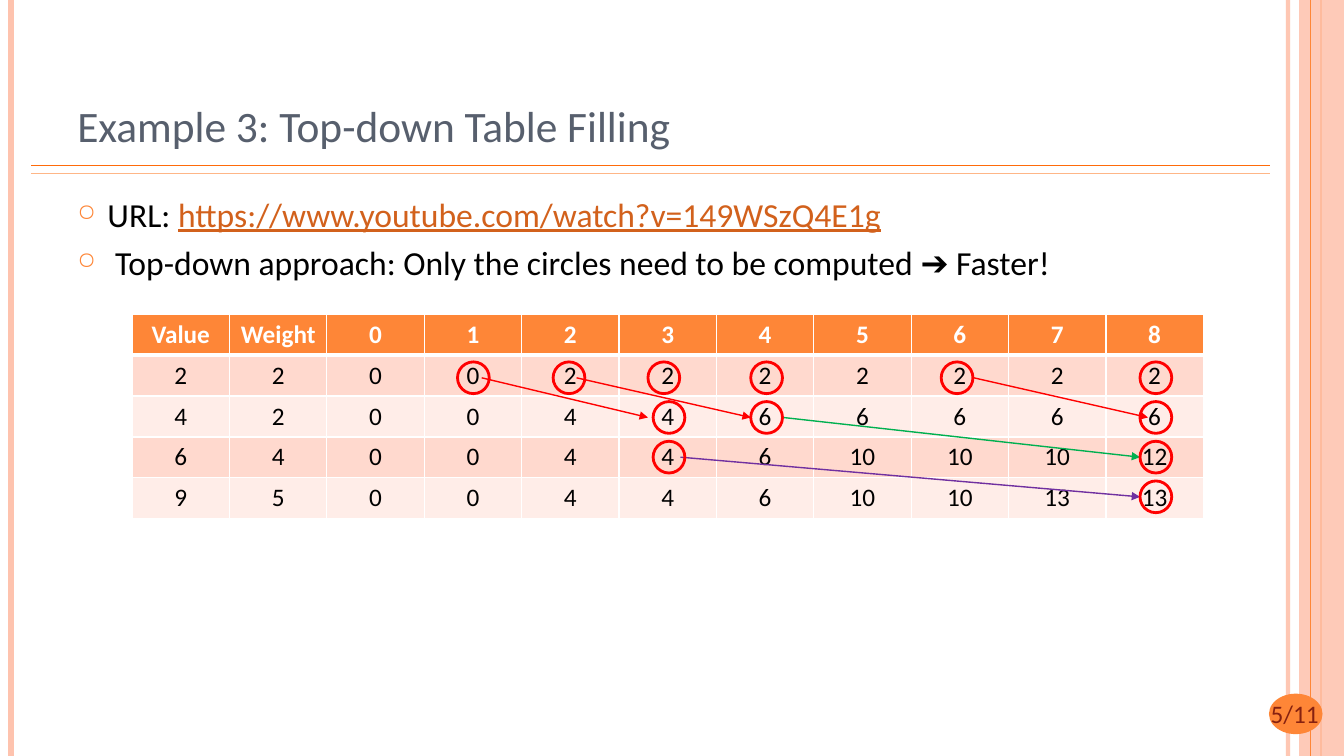
import pptx
import pptx.util
import pptx.dml.color
import pptx.enum.shapes
import pptx.enum.text
import pptx.oxml
import pptx.oxml.ns

Cm = pptx.util.Cm
Pt = pptx.util.Pt
RGBColor = pptx.dml.color.RGBColor
Kind = pptx.enum.shapes.MSO_SHAPE
Align = pptx.enum.text.PP_ALIGN
Anchor = pptx.enum.text.MSO_ANCHOR

WHITE = RGBColor(0xFF, 0xFF, 0xFF)
BLACK = RGBColor(0x00, 0x00, 0x00)
ORANGE = RGBColor(0xFE, 0x86, 0x37)
DEEP = RGBColor(0xFF, 0x6B, 0x0A)
LIGHT = RGBColor(0xFE, 0xB6, 0x87)
PEACH = RGBColor(0xFE, 0xC3, 0xAE)
SLATE = RGBColor(0x57, 0x5F, 0x6D)
RUST = RGBColor(0xD2, 0x61, 0x1C)
MAROON = RGBColor(0x86, 0x21, 0x10)
BANDS = (RGBColor(0xFF, 0xD9, 0xCE), RGBColor(0xFF, 0xED, 0xE8))
RED = RGBColor(0xFF, 0x00, 0x00)
GREEN = RGBColor(0x00, 0xB0, 0x50)
PURPLE = RGBColor(0x70, 0x30, 0xA0)

WIDE, HIGH = 33.87, 19.05
ROWS = (
    "Value Weight 0 1 2 3 4 5 6 7 8",
    "2 2 0 0 2 2 2 2 2 2 2",
    "4 2 0 0 4 4 6 6 6 6 6",
    "6 4 0 0 4 4 6 10 10 10 12",
    "9 5 0 0 4 4 6 10 10 13 13",
)
RING = 0.8
RING_TOP = 9.12
STEP = 1.0
# Left edge of the rings, and the data rows they mark
RINGS = (
    (11.53, (0,)), (13.94, (0,)), (16.33, (0,)), (16.46, (1, 2)),
    (18.92, (0, 1)), (23.72, (0,)), (28.73, (0, 1, 2, 3)),
)
# Start x, end x, data row at the start, colour
ARROWS = (
    (12.14, 16.33, 0, RED), (14.53, 18.92, 0, RED), (24.54, 28.93, 0, RED),
    (19.74, 28.73, 1, GREEN), (17.15, 28.73, 2, PURPLE),
)


def make(tag, xml=""):
    """Build one DrawingML element with the given content."""
    name = tag.split()[0]
    space = pptx.oxml.ns.nsdecls("a")
    return pptx.oxml.parse_xml(f"<a:{tag} {space}>{xml}</a:{name}>")


def fade(fill, share):
    """Set the opacity, in percent, of a solid fill element's colour."""
    color = fill.find(".//" + pptx.oxml.ns.qn("a:srgbClr"))
    color.append(make(f'alpha val="{share * 1000}"'))


def style(run, size, color, bold=False):
    run.font.name = "Calibri"
    run.font.size = Pt(size)
    run.font.color.rgb = color
    run.font.bold = bold


def add_line(slide, x1, y1, x2, y2, color, width):
    line = slide.shapes.add_connector(
        pptx.enum.shapes.MSO_CONNECTOR.STRAIGHT, Cm(x1), Cm(y1), Cm(x2), Cm(y2))
    line.line.color.rgb = color
    line.line.width = Pt(width)
    line._element.spPr.append(make("effectLst"))
    return line


def add_arrow(slide, x1, y1, x2, y2, color):
    arrow = add_line(slide, x1, y1, x2, y2, color, 1)
    arrow.line._get_or_add_ln().append(make('tailEnd type="triangle"'))


def add_solid(slide, kind, x, y, w, h, color):
    shape = slide.shapes.add_shape(kind, Cm(x), Cm(y), Cm(w), Cm(h))
    shape.shadow.inherit = False
    shape.fill.solid()
    shape.fill.fore_color.rgb = color
    shape.line.fill.background()
    return shape


def add_ring(slide, x, y):
    ring = slide.shapes.add_shape(Kind.OVAL, Cm(x), Cm(y), Cm(RING), Cm(RING))
    ring.shadow.inherit = False
    ring.fill.background()
    ring.line.color.rgb = RED
    ring.line.width = Pt(2)


def add_box(slide, x, y, w, h, anchor=Anchor.TOP):
    box = slide.shapes.add_textbox(Cm(x), Cm(y), Cm(w), Cm(h))
    frame = box.text_frame
    frame.word_wrap = True
    frame.vertical_anchor = anchor
    return frame


def add_label(frame, text, size, color, align):
    frame.text = text
    para = frame.paragraphs[0]
    para.alignment = align
    style(para.runs[0], size, color)


def add_bullet(para):
    props = para._p.get_or_add_pPr()
    props.set("marL", str(Cm(0.76)))
    props.set("indent", str(-Cm(0.76)))
    props.append(make("buClr", f'<a:srgbClr val="{ORANGE}"/>'))
    props.append(make('buSzPct val="70000"'))
    props.append(make('buChar char="○"'))


def add_body(slide):
    frame = add_box(slide, 1.7, 4.75, 27.66, 13.23)
    first = frame.paragraphs[0]
    first.text = "URL: "
    first.add_run().text = "https://www.youtube.com/watch?v=149WSzQ4E1g"
    second = frame.add_paragraph()
    second.text = " Top-down approach: Only the circles need to be computed ➔ Faster!"
    for para in frame.paragraphs:
        add_bullet(para)
        for run in para.runs:
            style(run, 24, BLACK)
    second.space_before = Pt(6)
    link = first.runs[1]
    link.font.color.rgb = RUST
    link.font.underline = True


def add_edges(cell, low):
    """Draw white cell borders; low is the bottom one's width in points."""
    props = cell._tc.get_or_add_tcPr()
    for spot, (side, width) in enumerate(zip("LRTB", (1, 1, 1, low))):
        fill = f'<a:solidFill><a:srgbClr val="{WHITE}"/></a:solidFill>'
        props.insert(spot, make(f'ln{side} w="{Pt(width)}"', fill))


def add_grid(slide):
    data = [row.split() for row in ROWS]
    table = slide.shapes.add_table(
        len(data), len(data[0]), Cm(3.33), Cm(7.92), Cm(27), Cm(5.15)).table
    for r, row in enumerate(data):
        head = r == 0
        for c, text in enumerate(row):
            cell = table.cell(r, c)
            cell.fill.solid()
            cell.fill.fore_color.rgb = ORANGE if head else BANDS[(r - 1) % 2]
            add_label(cell.text_frame, text, 18, WHITE if head else BLACK, Align.CENTER)
            cell.text_frame.paragraphs[0].runs[0].font.bold = head
            add_edges(cell, 3 if r < 1 else 1)


def add_frame(slide):
    """Draw the side stripes, the title rules and the page badge."""
    edge = add_line(slide, 32.46, 0, 32.46, HIGH, PEACH, 3)
    fade(edge.line._get_or_add_ln(), 93)
    add_line(slide, 0.28, 0, 0.28, HIGH, PEACH, 4.5)
    add_line(slide, 33.3, 0, 33.3, HIGH, ORANGE, 1.5)
    band = add_solid(slide, Kind.RECTANGLE, 32.74, 0, 1.13, HIGH, PEACH)
    fade(band._element.spPr, 87)
    add_line(slide, 33.02, 0, 33.02, HIGH, ORANGE, 0.75)
    for y, color in ((4.17, DEEP), (4.37, LIGHT)):
        add_line(slide, 0.79, y, 32, y, color, 1)
    add_solid(slide, Kind.OVAL, 31.98, 17.48, 1.35, 1.02, ORANGE)
    add_label(add_box(slide, 31.09, 17.48, 3.07, 1.02), "5/11", 18, MAROON, Align.CENTER)


def main():
    deck = pptx.Presentation()
    deck.slide_width, deck.slide_height = Cm(WIDE), Cm(HIGH)
    slide = deck.slides.add_slide(deck.slide_layouts[6])
    add_frame(slide)
    add_body(slide)
    title = add_box(slide, 1.7, 0.76, 27.66, 3.18, Anchor.BOTTOM)
    add_label(title, "Example 3: Top-down Table Filling", 31, SLATE, Align.LEFT)
    add_grid(slide)
    for x1, x2, row, color in ARROWS:
        y = RING_TOP + RING / 2 + row * STEP
        add_arrow(slide, x1, y, x2, y + STEP, color)
    for x, marks in RINGS:
        for row in marks:
            add_ring(slide, x, RING_TOP + row * STEP)
    deck.save("out.pptx")


if __name__ == "__main__":
    main()
